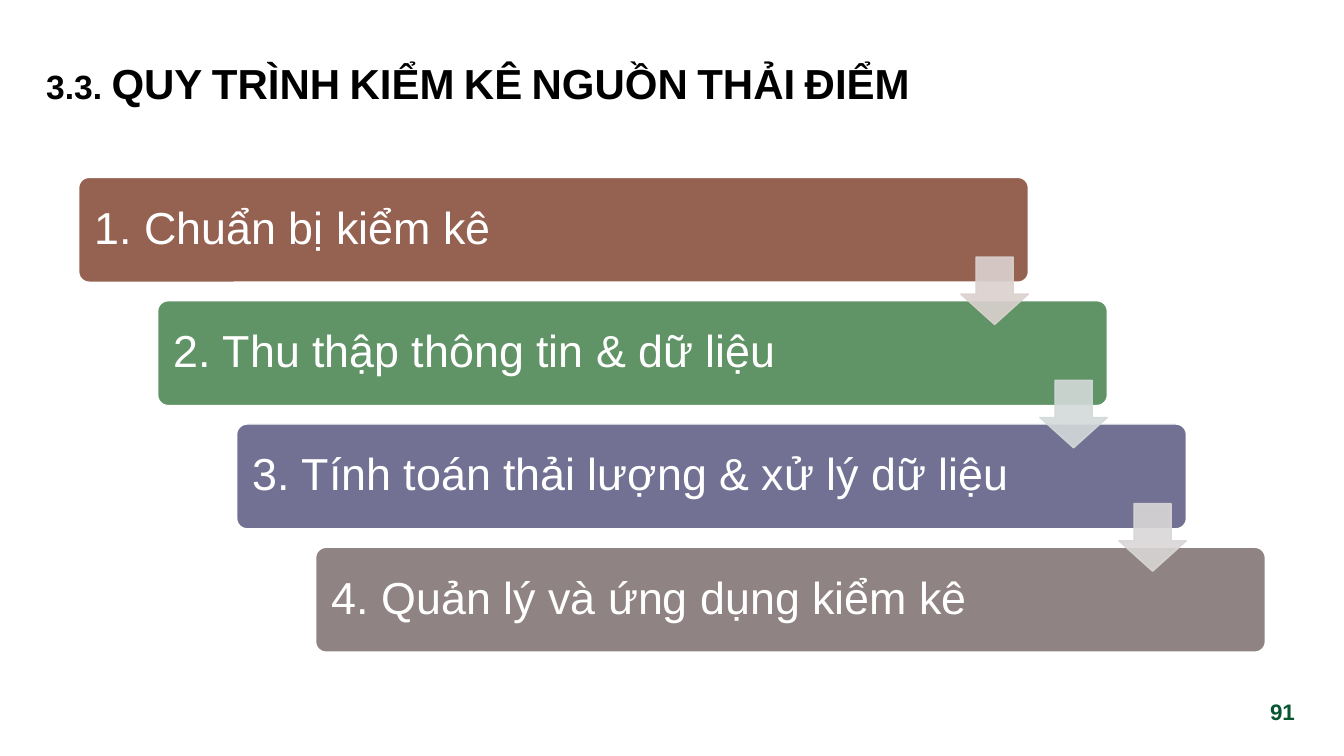
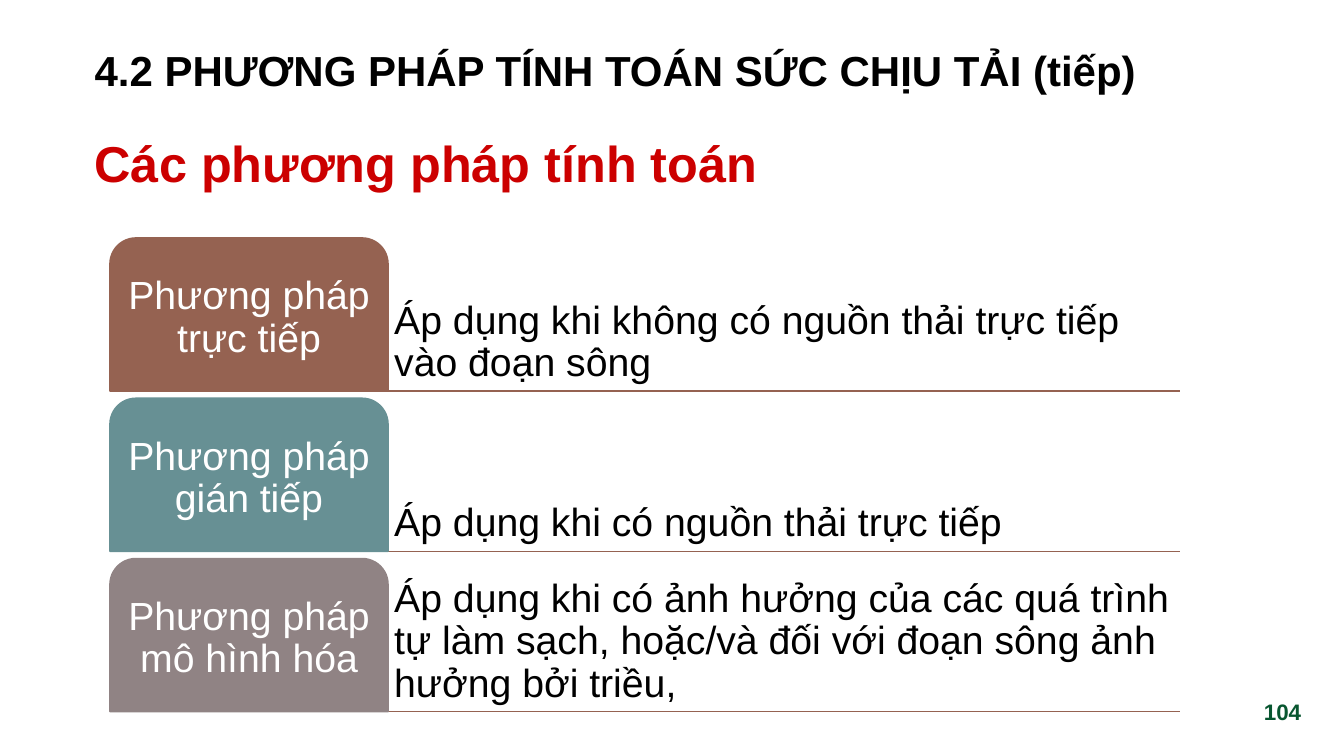
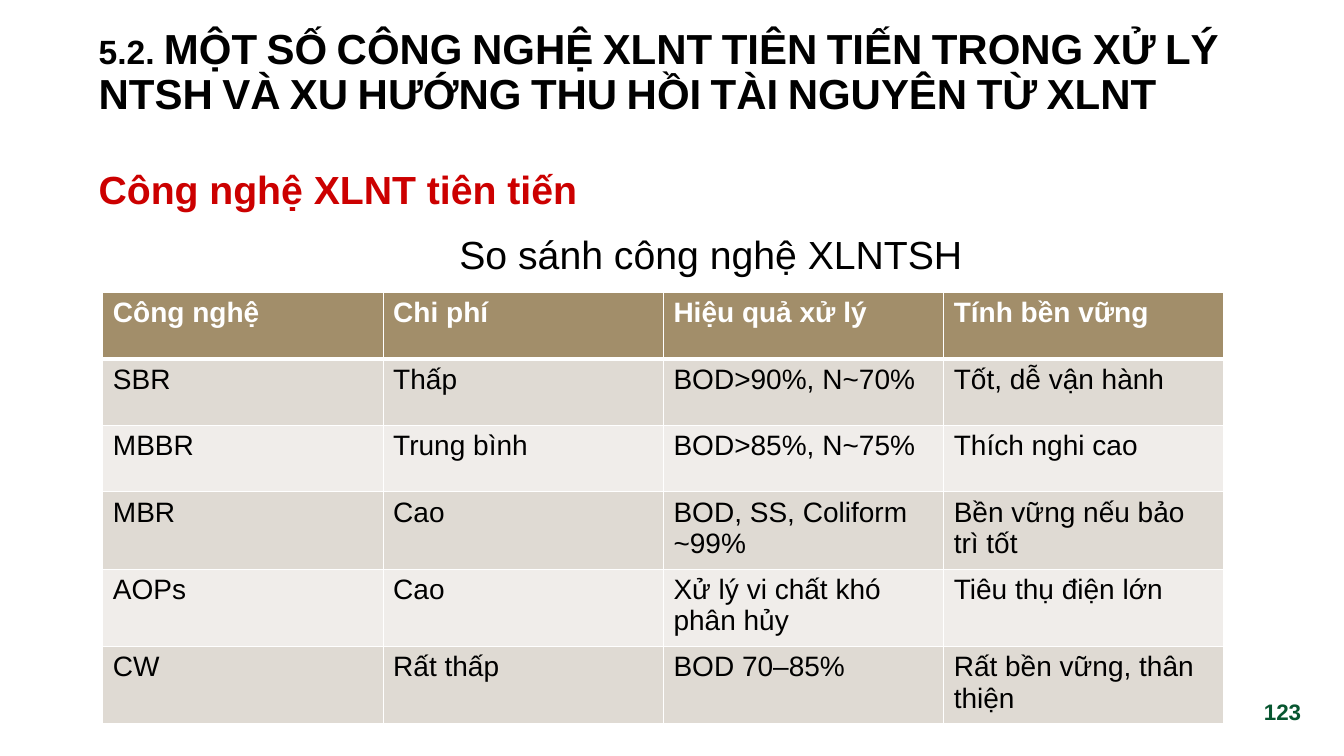
from dataclasses import dataclass

from pptx import Presentation
from pptx.dml.color import RGBColor
from pptx.enum.shapes import MSO_CONNECTOR, MSO_SHAPE
from pptx.enum.text import MSO_ANCHOR, PP_ALIGN
from pptx.oxml.ns import qn
from pptx.util import Inches, Pt
from lxml.etree import SubElement


@dataclass(frozen=True)
class Theme:
    font: str = "Arial"
    ink: str = "000000"
    white: str = "FFFFFF"
    accent: str = "CC0000"
    number: str = "085630"
    brown: str = "956251"
    green: str = "609466"
    violet: str = "727193"
    teal: str = "679094"
    taupe: str = "908384"
    table_head: str = "A28E6A"
    table_bands: tuple = ("DFDAD3", "F0EDEA")
    arrows: tuple = ("DBD1CF", "D3D9D9", "D9D6D6")
    title_size: int = 30
    heading_size: int = 36
    step_size: int = 32
    body_size: int = 28
    table_size: int = 20
    number_size: int = 16


THEME = Theme()

STEPS = [
    ("1. Chuẩn bị kiểm kê", THEME.brown),
    ("2. Thu thập thông tin & dữ liệu", THEME.green),
    ("3. Tính toán thải lượng & xử lý dữ liệu", THEME.violet),
    ("4. Quản lý và ứng dụng kiểm kê", THEME.taupe),
]

METHODS = [
    ("Phương pháp trực tiếp", THEME.brown,
     "Áp dụng khi không có nguồn thải trực tiếp vào đoạn sông"),
    ("Phương pháp gián tiếp", THEME.teal,
     "Áp dụng khi có nguồn thải trực tiếp"),
    ("Phương pháp mô hình hóa", THEME.taupe,
     "Áp dụng khi có ảnh hưởng của các quá trình tự làm sạch, "
     "hoặc/và đối với đoạn sông ảnh hưởng bởi triều,"),
]

TECHNOLOGIES = [
    ("Công nghệ", "Chi phí", "Hiệu quả xử lý", "Tính bền vững"),
    ("SBR", "Thấp", "BOD>90%, N~70%", "Tốt, dễ vận hành"),
    ("MBBR", "Trung bình", "BOD>85%, N~75%", "Thích nghi cao"),
    ("MBR", "Cao", "BOD, SS, Coliform ~99%", "Bền vững nếu bảo trì tốt"),
    ("AOPs", "Cao", "Xử lý vi chất khó phân hủy", "Tiêu thụ điện lớn"),
    ("CW", "Rất thấp", "BOD 70–85%", "Rất bền vững, thân thiện"),
]


def set_all(target, values):
    for name, value in values.items():
        setattr(target, name, value)


def inches(*lengths):
    return [Inches(length) for length in lengths]


def write(para, text, size, color, bold=False, small_caps=False, **layout):
    """Fill one paragraph; layout holds paragraph attributes."""
    set_all(para, layout)
    span = para.add_run()
    span.text = text
    set_all(span.font, {"name": THEME.font, "size": Pt(size), "bold": bold})
    span.font.color.rgb = RGBColor.from_string(color)
    if small_caps:
        span._r.get_or_add_rPr().set("cap", "small")


def lay_out_frame(frame, anchor, across, down):
    set_all(frame, {
        "word_wrap": True, "vertical_anchor": anchor,
        "margin_left": Inches(across), "margin_right": Inches(across),
        "margin_top": Inches(down), "margin_bottom": Inches(down),
    })


def add_text(page, place, anchor=MSO_ANCHOR.TOP, across=0.1, down=0.05):
    frame = page.shapes.add_textbox(*inches(*place)).text_frame
    lay_out_frame(frame, anchor, across, down)
    return frame


def add_shape(page, kind, place, fill, line, adjustments):
    shape = page.shapes.add_shape(kind, *inches(*place))
    shape.shadow.inherit = False
    shape.fill.solid()
    shape.fill.fore_color.rgb = RGBColor.from_string(fill)
    shape.line.color.rgb = RGBColor.from_string(line)
    shape.line.width = Pt(1)
    for index, value in enumerate(adjustments):
        shape.adjustments[index] = value
    return shape


def add_labelled_shape(page, kind, place, fill, line, adjustments,
                       text, size, margin, align):
    shape = add_shape(page, kind, place, fill, line, adjustments)
    lay_out_frame(shape.text_frame, MSO_ANCHOR.MIDDLE, margin, margin)
    write(shape.text_frame.paragraphs[0], text, size, THEME.white,
          alignment=align, line_spacing=0.9)


def add_arrow(page, place, color):
    arrow = add_shape(page, MSO_SHAPE.DOWN_ARROW, place, color, color, (0.55, 0.45))
    for tint in list(arrow._element.spPr.iter(qn("a:srgbClr"))):
        SubElement(tint, qn("a:alpha"), val="90000")


def add_rule(page, left, right, y):
    rule = page.shapes.add_connector(MSO_CONNECTOR.STRAIGHT, *inches(left, y, right, y))
    rule.line.color.rgb = RGBColor.from_string(THEME.brown)
    rule.line.width = Pt(1)
    SubElement(rule._element.spPr, qn("a:effectLst"))


def add_borders(cell, widths):
    """Draw white borders; widths maps an edge letter to points."""
    properties = cell._tc.get_or_add_tcPr()
    for edge, width in widths.items():
        border = SubElement(properties, qn(f"a:ln{edge}"), w=str(Pt(width)))
        fill = SubElement(border, qn("a:solidFill"))
        SubElement(fill, qn("a:srgbClr"), val=THEME.white)


def add_table(page, left, top, column_width, row_height, rows):
    count, columns = len(rows), len(rows[0])
    place = inches(left, top, column_width * columns, row_height * count)
    table = page.shapes.add_table(count, columns, *place).table
    for i, row in enumerate(rows):
        head = i == 0
        fill = THEME.table_head if head else THEME.table_bands[(i - 1) % 2]
        for j, text in enumerate(row):
            cell = table.cell(i, j)
            add_borders(cell, {"L": 1, "R": 1, "T": 3 if i == 1 else 1,
                               "B": 3 if head else 1})
            cell.fill.solid()
            cell.fill.fore_color.rgb = RGBColor.from_string(fill)
            write(cell.text_frame.paragraphs[0], text, THEME.table_size,
                  THEME.white if head else THEME.ink, bold=head)


def add_page(deck, number, title, place, spacing=0.9, small_caps=True):
    """Add a slide with its title and page number."""
    page = deck.slides.add_slide(deck.slide_layouts[6])
    frame = add_text(page, place, MSO_ANCHOR.MIDDLE)
    write(frame.paragraphs[0], title, THEME.title_size, THEME.ink, bold=True,
          small_caps=small_caps, line_spacing=spacing)
    frame = add_text(page, (12.37, 6.86, 0.7, 0.4), MSO_ANCHOR.MIDDLE)
    write(frame.paragraphs[0], str(number), THEME.number_size, THEME.number,
          bold=True, alignment=PP_ALIGN.CENTER)
    return page


def add_heading(page, place, text, size):
    frame = add_text(page, place)
    write(frame.paragraphs[0], text, size, THEME.accent, bold=True, line_spacing=1.2)
    return frame


def build_process(deck):
    page = add_page(deck, 91, "3.3. QUY TRÌNH KIỂM KÊ NGUỒN THẢI ĐIỂM",
                    (0.36, 0.25, 12.84, 1.05), spacing=1.2)
    last = len(STEPS) - 1
    corners = [(0.78 + 2.35 * i / last, 1.76 + 3.67 * i / last)
               for i in range(len(STEPS))]
    for (left, top), (text, color) in zip(corners, STEPS):
        add_labelled_shape(page, MSO_SHAPE.ROUNDED_RECTANGLE, (left, top, 9.42, 1.04),
                           color, THEME.white, (0.1,), text, THEME.step_size,
                           0.13, PP_ALIGN.LEFT)
    for (left, top), color in zip(corners, THEME.arrows):
        add_arrow(page, (left + 8.75, top + 0.79, 0.67, 0.67), color)


def build_methods(deck):
    page = add_page(deck, 104, "4.2 PHƯƠNG PHÁP TÍNH TOÁN SỨC CHỊU TẢI (tiếp)",
                    (0.84, 0.23, 12.37, 0.99), small_caps=False)
    add_heading(page, (0.84, 1.14, 12.37, 0.9), "Các phương pháp tính toán",
                THEME.heading_size)
    left, middle, right, height = 1.09, 3.85, 11.7, 1.52
    for i, (name, color, use) in enumerate(METHODS):
        top = 2.36 + 1.59 * i
        add_rule(page, left, right, top + height)
        frame = add_text(page, (middle, top, right - middle, height),
                         MSO_ANCHOR.BOTTOM, 0.06, 0.06)
        write(frame.paragraphs[0], use, THEME.body_size, THEME.ink, line_spacing=0.9)
        add_labelled_shape(page, MSO_SHAPE.ROUND_2_SAME_RECTANGLE,
                           (left, top, middle - left, height), color, color,
                           (0.17, 0), name, THEME.body_size, 0.06, PP_ALIGN.CENTER)


def build_comparison(deck):
    page = add_page(deck, 123,
                    "5.2. MỘT SỐ CÔNG NGHỆ XLNT TIÊN TIẾN TRONG XỬ LÝ NTSH "
                    "VÀ XU HƯỚNG THU HỒI TÀI NGUYÊN TỪ XLNT",
                    (0.88, 0.12, 12.34, 1.22))
    frame = add_heading(page, (0.88, 1.5, 12.34, 1.4), "Công nghệ XLNT tiên tiến",
                        THEME.body_size)
    write(frame.add_paragraph(), "So sánh công nghệ XLNTSH", THEME.body_size, THEME.ink,
          alignment=PP_ALIGN.CENTER, line_spacing=1.2, space_before=Pt(6))
    add_table(page, 1.02, 2.9, 2.78, 0.66, TECHNOLOGIES)


def main():
    deck = Presentation()
    set_all(deck, {"slide_width": Inches(13.33), "slide_height": Inches(7.5)})
    build_process(deck)
    build_methods(deck)
    build_comparison(deck)
    deck.save("out.pptx")


if __name__ == "__main__":
    main()
